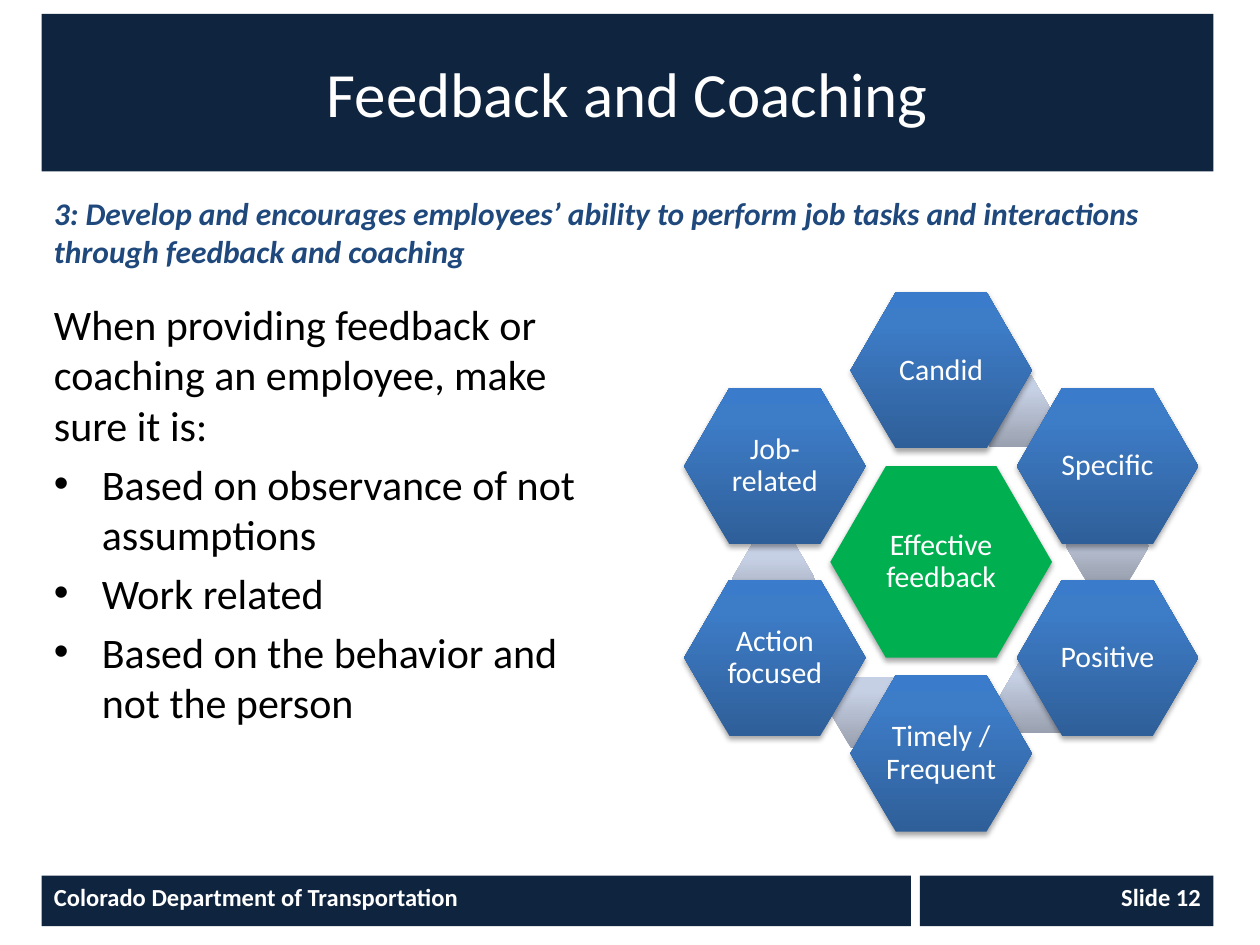
from copy import deepcopy

from lxml.etree import SubElement
from pptx import Presentation
from pptx.dml.color import RGBColor
from pptx.enum.shapes import MSO_SHAPE
from pptx.enum.text import MSO_ANCHOR, MSO_AUTO_SIZE, PP_ALIGN
from pptx.oxml import parse_xml
from pptx.oxml.ns import nsdecls, qn
from pptx.util import Inches, Pt

THEME = {
    "font": "Calibri",
    "navy": "0F243E", "blue": "1F497D", "green": "00B050",
    "white": "FFFFFF", "black": "000000",
    "node": ["2F5F99", "3D7CC7", "3A7CCB"],
    "link": ["99A0AF", "C6D0E4", "C7D1E5"],
    "title": 36, "body": 24, "lead": 18, "ring": 17, "foot": 14,
}
SHADOW = (
    f'<a:effectLst {nsdecls("a")}><a:outerShdw blurRad="39370" dist="22860" '
    'dir="5400000" rotWithShape="0"><a:srgbClr val="000000">'
    '<a:alpha val="35000"/></a:srgbClr></a:outerShdw></a:effectLst>'
)


def write(shape, text, size, color, align=PP_ALIGN.LEFT, anchor=MSO_ANCHOR.TOP,
          bold=False, italic=False):
    frame = shape.text_frame
    frame.text = text
    frame.word_wrap = True
    frame.auto_size = MSO_AUTO_SIZE.NONE
    frame.vertical_anchor = anchor
    for para in frame.paragraphs:
        para.alignment = align
        for run in para.runs:
            font = run.font
            font.name, font.size = THEME["font"], Pt(THEME[size])
            font.color.rgb = RGBColor.from_string(THEME[color])
            font.bold, font.italic = bold, italic
    return frame


def hexagon(left, top, width, height, fill, text=""):
    shape = slide.shapes.add_shape(
        MSO_SHAPE.HEXAGON, Inches(left), Inches(top), Inches(width), Inches(height))
    shape.adjustments[0] = 0.29
    shape.line.fill.background()
    shape.shadow.inherit = False
    if isinstance(fill, str):
        shape.fill.solid()
        shape.fill.fore_color.rgb = RGBColor.from_string(fill)
    else:
        # Gradient from the bottom up, with a third stop
        shape.fill.gradient()
        shape.fill.gradient_angle = 90
        stops = shape._element.xpath(".//a:gsLst")[0]
        stops.append(deepcopy(stops[-1]))
        for stop, place, color in zip(shape.fill.gradient_stops, (0, 0.8, 1), fill):
            stop.position = place
            stop.color.rgb = RGBColor.from_string(color)
    if text:
        props = shape._element.spPr
        props.replace(props.find(qn("a:effectLst")), parse_xml(SHADOW))
        frame = write(shape, text, "ring", "white", PP_ALIGN.CENTER, MSO_ANCHOR.MIDDLE)
        frame.margin_left = frame.margin_right = Inches(0.02)
        frame.margin_top = frame.margin_bottom = Inches(0.02)
        frame.paragraphs[0].line_spacing = 0.9


deck = Presentation()
deck.slide_width, deck.slide_height = Inches(10), Inches(7.5)
slide = deck.slides.add_slide(deck.slide_layouts[5])

# Title band
title = slide.shapes.title
title.left, title.top = Inches(0.33), Inches(0.11)
title.width, title.height = Inches(9.3), Inches(1.25)
title.fill.solid()
title.fill.fore_color.rgb = RGBColor.from_string(THEME["navy"])
write(title, "Feedback and Coaching", "title", "white",
      PP_ALIGN.CENTER, MSO_ANCHOR.MIDDLE)

# Lead line
lead = slide.shapes.add_textbox(Inches(0.33), Inches(1.49), Inches(9.3), Inches(0.71))
write(lead, "3: Develop and encourages employees’ ability to perform job tasks and "
      "interactions through feedback and coaching", "lead", "blue",
      bold=True, italic=True)

# Body with bullets after the first paragraph
body = slide.shapes.add_textbox(Inches(0.33), Inches(2.32), Inches(4.38), Inches(4.28))
lines = [
    "When providing feedback or coaching an employee, make sure it is:",
    "Based on observance of not assumptions",
    "Work related",
    "Based on the behavior and not the person",
]
frame = write(body, "\n".join(lines), "body", "black")
for para in frame.paragraphs:
    para.space_before = Pt(4.8)
for para in frame.paragraphs[1:]:
    props = para._p.get_or_add_pPr()
    props.set("marL", str(Inches(0.38)))
    props.set("indent", str(-Inches(0.38)))
    SubElement(props, qn("a:buFont")).set("typeface", "Arial")
    SubElement(props, qn("a:buChar")).set("char", "•")

# Hexagon ring: label, column and row steps from the centre, link corner
mid_x, mid_y = 7.47, 4.46
wide, high = 1.44, 1.24
ring = [
    ("Candid", 0, -2, (7.69, 2.98)),
    ("Specific", 1, -1, (8.46, 4.05)),
    ("Positive", 1, 1, (7.93, 5.25)),
    ("Timely / Frequent", 0, 2, (6.59, 5.37)),
    ("Action focused", -1, 1, (5.81, 4.31)),
    ("Job-related", -1, -1, None),
]
hexagon(mid_x - 0.88, mid_y - 0.76, 1.76, 1.52, THEME["green"], "Effective feedback")
for label, col, row, link in ring:
    if link:
        hexagon(*link, 0.66, 0.57, THEME["link"])
    hexagon(mid_x + 1.32 * col - wide / 2, mid_y + 0.76 * row - high / 2,
            wide, high, THEME["node"], label)

# Footer bars
for left, width, text, align in [
    (0.33, 6.9, "Colorado Department of Transportation", PP_ALIGN.LEFT),
    (7.3, 2.33, "Slide 12", PP_ALIGN.RIGHT),
]:
    bar = slide.shapes.add_shape(
        MSO_SHAPE.RECTANGLE, Inches(left), Inches(6.95), Inches(width), Inches(0.4))
    bar.shadow.inherit = False
    bar.fill.solid()
    bar.fill.fore_color.rgb = RGBColor.from_string(THEME["navy"])
    bar.line.fill.background()
    write(bar, text, "foot", "white", align, bold=True)

deck.save("out.pptx")
